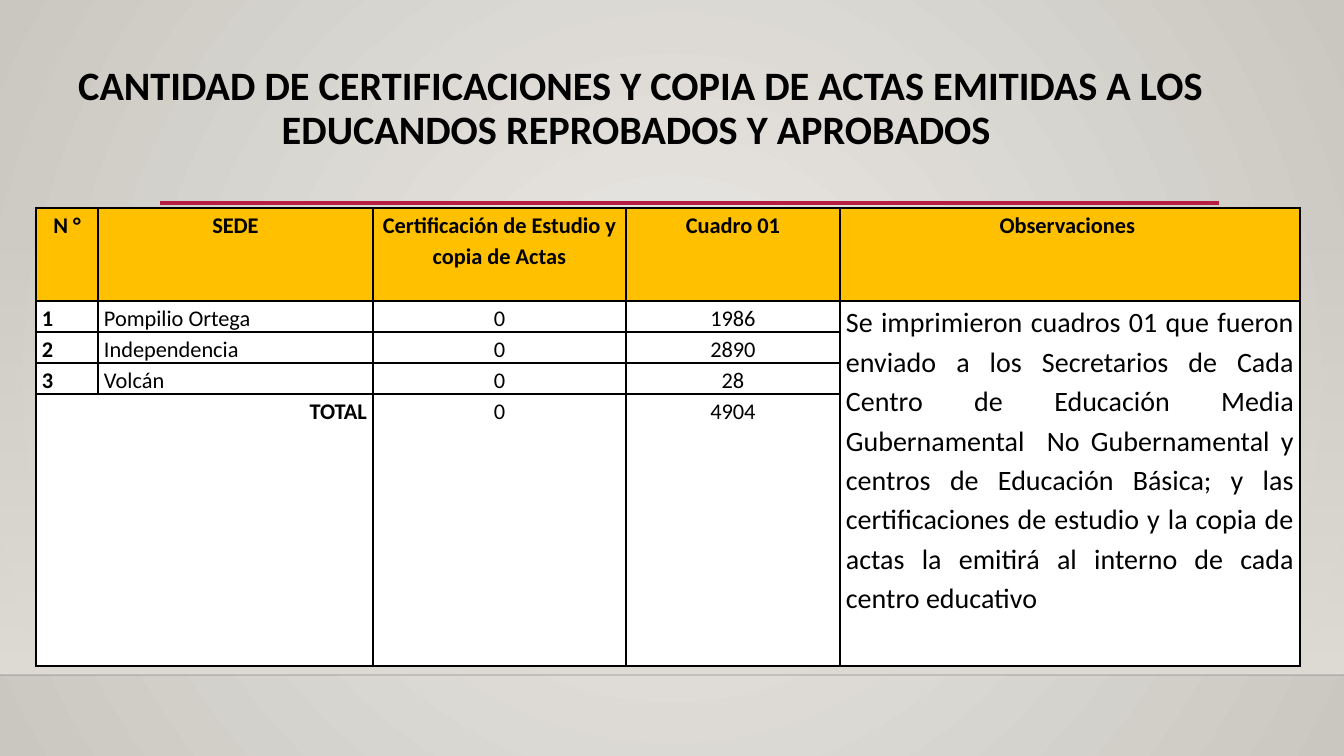
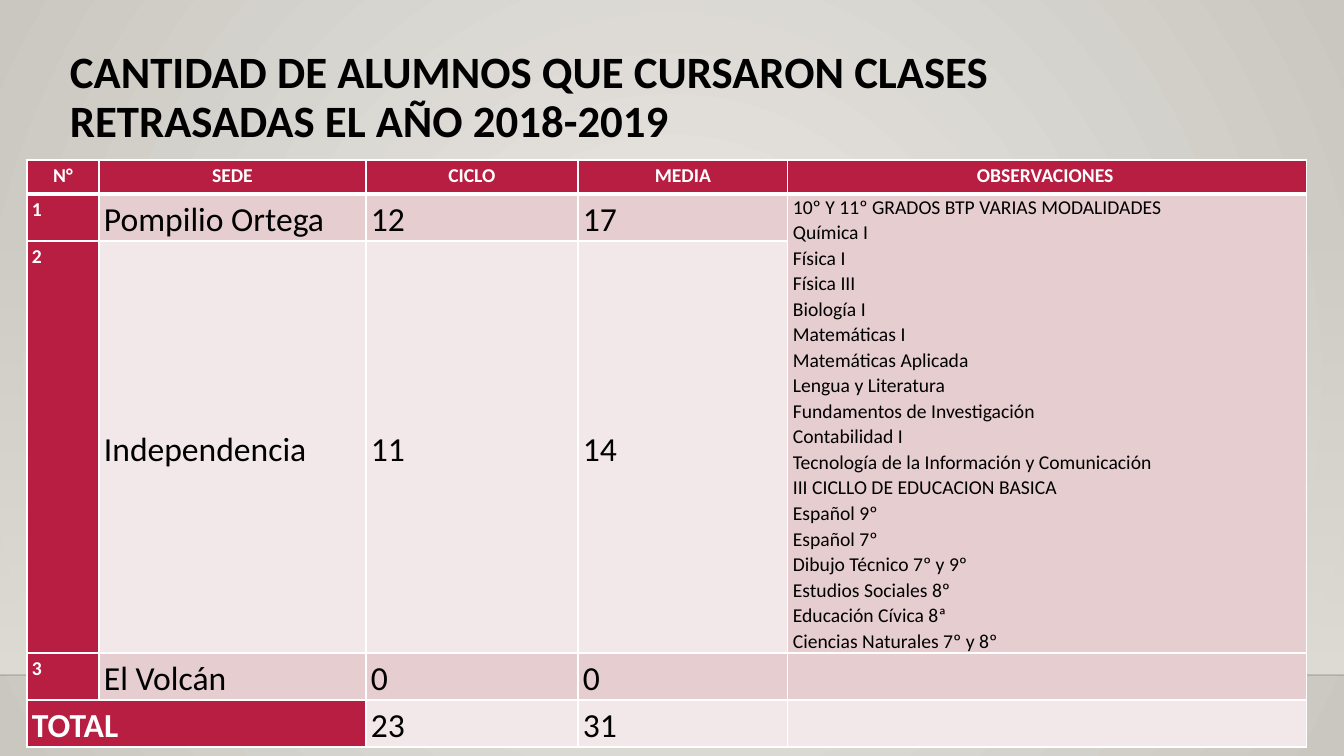
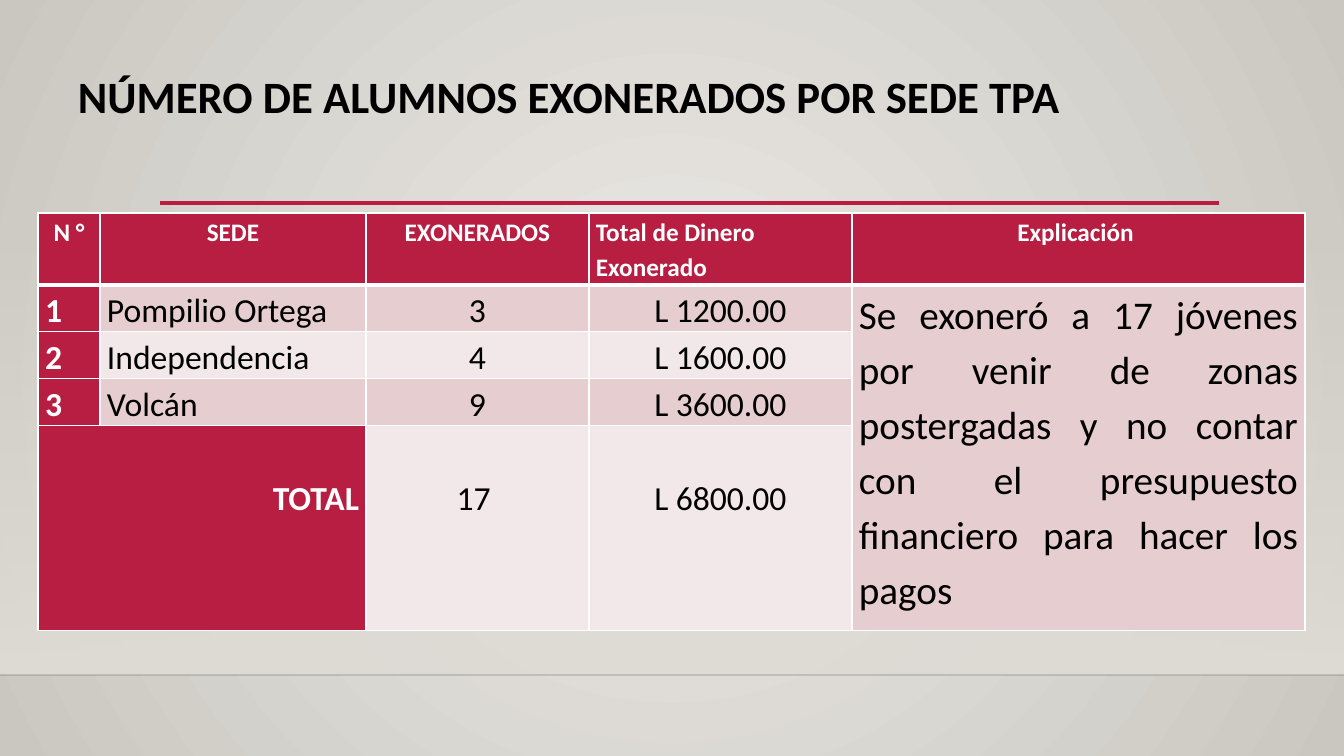
import lxml.etree
import pptx
import pptx.dml.color
import pptx.enum.shapes
import pptx.enum.text
import pptx.oxml.ns
import pptx.util

qn = pptx.oxml.ns.qn
ALIGN = pptx.enum.text.PP_ALIGN
ANCHOR = pptx.enum.text.MSO_ANCHOR
WIDTH, HEIGHT = 1344, 756
PX = 12192000 / WIDTH
FONT = "Calibri"
CRIMSON, ROSE, BLUSH = "B71E42", "E6CDCF", "F3E8E9"
BLACK, WHITE, AMBER, SAND = "000000", "FFFFFF", "FFC000", "DFDBD5"
LEFT, CENTER, RIGHT, JUSTIFY = ALIGN.LEFT, ALIGN.CENTER, ALIGN.RIGHT, ALIGN.JUSTIFY


def px(n):
    return pptx.util.Emu(round(n * PX))


def rgb(color):
    return pptx.dml.color.RGBColor.from_string(color)


def set_alpha(parent, percent):
    clr = next(parent.iter(qn("a:srgbClr")))
    lxml.etree.SubElement(clr, qn("a:alpha"), val=str(percent * 1000))


def set_gradient(fill, start, end):
    fill.gradient()
    for stop, color, position in zip(fill.gradient_stops, (start, end), (0, 1)):
        stop.color.rgb = rgb(color)
        stop.position = position


def write(p, text, align, spacing, size, bold, color):
    p.alignment, p.line_spacing = align, spacing
    r = p.add_run()
    r.text = text
    font = {"name": FONT, "size": pptx.util.Pt(size), "bold": bold}
    for name, value in font.items():
        setattr(r.font, name, value)
    r.font.color.rgb = rgb(color)


def add_rule(s, x1, x2, y, color, width, opacity=100):
    line = s.shapes.add_connector(pptx.enum.shapes.MSO_CONNECTOR.STRAIGHT,
                                  px(x1), px(y), px(x2), px(y))
    line.line.color.rgb = rgb(color)
    line.line.width = pptx.util.Pt(width)
    lxml.etree.SubElement(line._element.spPr, qn("a:effectLst"))
    if opacity < 100:
        set_alpha(line._element.spPr, opacity)


def add_backdrop(s):
    # Radial background
    set_gradient(s.background.fill, "ECEAE7", "CAC7C1")
    grad = next(s._element.iter(qn("a:gradFill")))
    grad.remove(grad.find(qn("a:lin")))
    radial = lxml.etree.SubElement(grad, qn("a:path"), path="circle")
    lxml.etree.SubElement(radial, qn("a:fillToRect"),
                          dict.fromkeys("ltrb", "50000"))
    # Band fading in towards the floor line
    band = s.shapes.add_shape(pptx.enum.shapes.MSO_SHAPE.RECTANGLE,
                              0, px(223), px(WIDTH), px(452))
    band.shadow.inherit = False
    band.line.fill.background()
    set_gradient(band.fill, SAND, SAND)
    band.fill.gradient_angle = 270
    set_alpha(band._element.spPr, 0)
    # Floor line and title rule
    add_rule(s, 0, WIDTH, 675, "000001", 1, opacity=20)
    add_rule(s, 160, 1219, 203, CRIMSON, 2.5)


def add_title(s, box, text, size=32, align=LEFT):
    tf = s.shapes.add_textbox(*map(px, box)).text_frame
    tf.word_wrap = True
    write(tf.paragraphs[0], text, align, 0.9, size, True, BLACK)


def set_borders(cell, color, widths):
    tcPr = cell._tc.get_or_add_tcPr()
    for side, width in zip("LRTB", widths):
        ln = lxml.etree.SubElement(tcPr, qn("a:ln" + side), w=str(width * 12700))
        solid = lxml.etree.SubElement(ln, qn("a:solidFill"))
        lxml.etree.SubElement(solid, qn("a:srgbClr"), val=color)


def cell_format(look, r, c):
    """Header row, key column and banded body; then this table's exceptions."""
    fmt = {"size": look["size"], "bold": False, "color": BLACK, "spacing": 1.15,
           "align": look["aligns"][c], "fill": look["bands"][r % 2],
           "anchor": look["anchor"], "top": 0}
    if r == 0 or c == 0:
        fmt.update(bold=True, color=look["key_color"], fill=look["key_fill"])
    if r == 0:
        fmt.update(size=look["head_size"], align=CENTER, fill=look["head_fill"],
                   anchor=ANCHOR.TOP)
    fmt.update(look["special"].get((r, c), {}))
    return fmt


def add_grid(s, at, cols, heights, rows, merges, look):
    tbl = s.shapes.add_table(len(rows), len(cols), *map(px, at),
                             px(sum(cols)), px(sum(heights))).table
    tbl.first_row = tbl.horz_banding = False
    for col, width in zip(tbl.columns, cols):
        col.width = px(width)
    for row, height in zip(tbl.rows, heights):
        row.height = px(height)
    for first, last in merges:
        tbl.cell(*first).merge(tbl.cell(*last))
    for r, texts in enumerate(rows):
        for c, text in enumerate(texts):
            cell, fmt = tbl.cell(r, c), cell_format(look, r, c)
            rule = look["head_rule"]
            set_borders(cell, look["border"], (1, 1, rule if r == 1 else 1,
                                               rule if r == 0 else 1))
            cell.fill.solid()
            cell.fill.fore_color.rgb = rgb(fmt.pop("fill"))
            cell.vertical_anchor = fmt.pop("anchor")
            margins = {"left": look["pad"], "right": look["pad"],
                       "top": fmt.pop("top"), "bottom": 0}
            for side, value in margins.items():
                setattr(cell, "margin_" + side, px(value))
            if not text:
                continue
            tf = cell.text_frame
            for i, line in enumerate(text.split("\n")):
                write(tf.add_paragraph() if i else tf.paragraphs[0], line, **fmt)


# Table looks
CRIMSON_LOOK = {"border": WHITE, "head_rule": 3, "head_fill": CRIMSON,
                "key_fill": CRIMSON, "key_color": WHITE, "bands": (BLUSH, ROSE),
                "size": 24, "anchor": ANCHOR.TOP,
                "aligns": (JUSTIFY, JUSTIFY, CENTER, CENTER, JUSTIFY)}
AMBER_LOOK = {**CRIMSON_LOOK, "border": BLACK, "head_rule": 1,
              "head_fill": AMBER, "key_fill": WHITE, "key_color": BLACK,
              "bands": (WHITE, WHITE), "size": 16, "head_size": 16, "pad": 6}
TOTAL_MERGE = ((4, 0), (4, 1))
NOTE_MERGE = ((1, 4), (4, 4))


def certificates_slide(s):
    add_title(s, (52, 61, 1178, 116),
              "CANTIDAD DE CERTIFICACIONES Y COPIA DE ACTAS EMITIDAS A LOS "
              "EDUCANDOS REPROBADOS Y APROBADOS ", 28.8, CENTER)
    note = ("Se imprimieron cuadros 01 que fueron enviado a los Secretarios de "
            "Cada Centro de Educación Media Gubernamental  No Gubernamental y "
            "centros de Educación Básica; y las certificaciones de estudio y la "
            "copia de actas la emitirá al interno de cada centro educativo")
    rows = [
        ("N °", "SEDE", "Certificación de Estudio y copia de Actas",
         "Cuadro 01", "Observaciones "),
        ("1", "Pompilio Ortega", "0", "1986", note),
        ("2", "Independencia ", "0", "2890", ""),
        ("3", "Volcán", "0", "28", ""),
        ("TOTAL", "", "0", "4904", ""),
    ]
    special = {(1, 4): {"size": 20}, (4, 0): {"align": RIGHT}}
    add_grid(s, (36, 208), (62, 275, 253, 214, 460), (93, 31, 31, 31, 272),
             rows, (TOTAL_MERGE, NOTE_MERGE), {**AMBER_LOOK, "special": special})


def retakes_slide(s):
    add_title(s, (60, 45, 1182, 116),
              "CANTIDAD DE ALUMNOS QUE CURSARON CLASES RETRASADAS EL AÑO 2018-2019")
    subjects = "\n".join((
        "10º Y 11º GRADOS BTP VARIAS MODALIDADES", "Química I", "Física I",
        "Física III", "Biología I", "Matemáticas I", "Matemáticas Aplicada",
        "Lengua y Literatura", "Fundamentos de Investigación",
        "Contabilidad I", "Tecnología de la Información y Comunicación",
        "III CICLLO DE EDUCACION BASICA", "Español 9º", "Español 7º",
        "Dibujo Técnico 7º y 9º", "Estudios Sociales 8º",
        "Educación Cívica 8ª", "Ciencias Naturales 7º y 8º"))
    rows = [
        ("N°", "SEDE", "CICLO", "MEDIA", "OBSERVACIONES "),
        ("1", "Pompilio Ortega", "12", "17", subjects),
        ("2", "Independencia", "11", "14", ""),
        ("3", "El Volcán", "0", "0", ""),
        ("TOTAL", "", "23", "31", ""),
    ]
    special = {(r, 0): {"size": 14, "anchor": ANCHOR.TOP} for r in (1, 2, 3)}
    special[1, 4] = {"size": 14, "spacing": 1.07, "anchor": ANCHOR.TOP}
    look = {**CRIMSON_LOOK, "head_size": 14, "pad": 5, "aligns": (LEFT,) * 5,
            "anchor": ANCHOR.MIDDLE, "special": special}
    add_grid(s, (27, 160), (72, 267, 212, 210, 519), (34, 47, 412, 47, 47),
             rows, (TOTAL_MERGE, ((1, 4), (2, 4))), look)


def exemptions_slide(s):
    add_title(s, (68, 70, 1151, 116), "NÚMERO DE ALUMNOS EXONERADOS POR SEDE TPA")
    note = ("Se exoneró a 17 jóvenes por venir de zonas postergadas y no contar "
            "con el presupuesto financiero para hacer los pagos")
    rows = [
        ("N °", "SEDE", "EXONERADOS", "Total de Dinero Exonerado", "Explicación "),
        ("1", "Pompilio Ortega", "3", "L 1200.00", note),
        ("2", "Independencia ", "4", "L 1600.00", ""),
        ("3", "Volcán", "9", "L 3600.00", ""),
        ("TOTAL", "", "17 ", "L 6800.00", ""),
    ]
    special = {(4, c): {"top": 47} for c in (2, 3)}
    special.update({(0, 3): {"align": LEFT}, (1, 4): {"size": 28},
                    (4, 0): {"top": 47, "align": RIGHT}})
    look = {**CRIMSON_LOOK, "head_size": 18, "pad": 7, "special": special}
    add_grid(s, (38, 213), (62, 266, 223, 263, 453), (72, 46, 47, 47, 205),
             rows, (TOTAL_MERGE, NOTE_MERGE), look)


def main():
    prs = pptx.Presentation()
    prs.slide_width, prs.slide_height = px(WIDTH), px(HEIGHT)
    for build in (certificates_slide, retakes_slide, exemptions_slide):
        s = prs.slides.add_slide(prs.slide_layouts[6])
        add_backdrop(s)
        build(s)
    prs.save("out.pptx")


if __name__ == "__main__":
    main()
